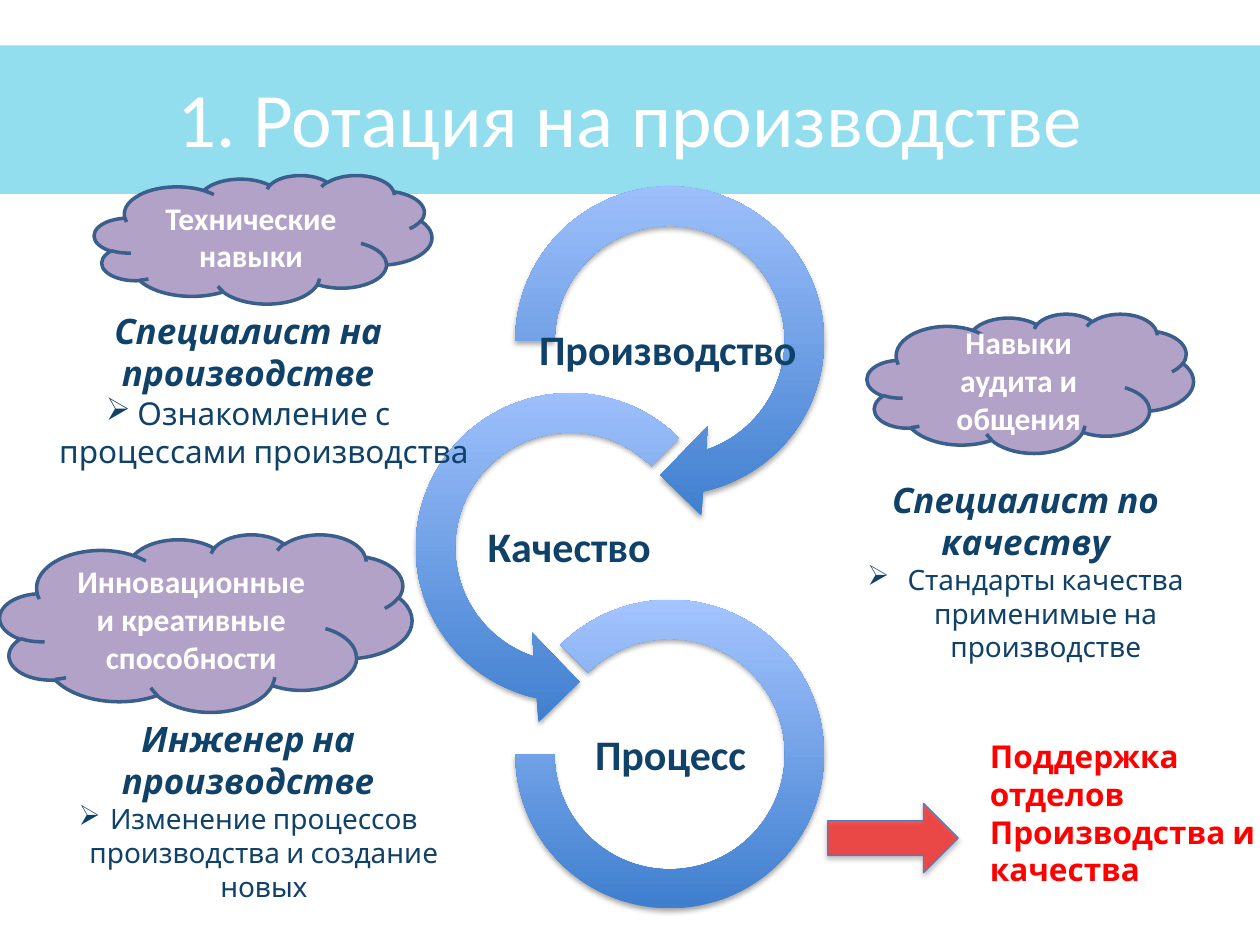
from lxml import etree
from pptx import Presentation
from pptx.dml.color import RGBColor
from pptx.enum.shapes import MSO_SHAPE
from pptx.enum.text import MSO_ANCHOR, MSO_AUTO_SIZE, PP_ALIGN
from pptx.oxml.ns import qn
from pptx.util import Inches, Pt

LEFT, MID = PP_ALIGN.LEFT, PP_ALIGN.CENTER
TOP, CENTER = MSO_ANCHOR.TOP, MSO_ANCHOR.MIDDLE
GROW = MSO_AUTO_SIZE.SHAPE_TO_FIT_TEXT
RECT, CLOUD, ARROW = MSO_SHAPE.RECTANGLE, MSO_SHAPE.CLOUD, MSO_SHAPE.RIGHT_ARROW
RIGHT_TURN, LEFT_TURN = MSO_SHAPE.CIRCULAR_ARROW, MSO_SHAPE.LEFT_CIRCULAR_ARROW
ARC = MSO_SHAPE.BLOCK_ARC

HEX = {"band": "12B7DC", "white": "FFFFFF", "navy": "104168", "deep": "3F7FCE",
       "pale": "A4C4FF", "lilac": "B3A2C7", "edge": "3A5F8C", "red": "FF0000",
       "rim": "4B7EBC", "black": "000000"}
UNIT = Inches(0.1)  # the slide is a grid of 100 columns by 75 rows


def color(name):
    return RGBColor.from_string(HEX[name])


def part(box, share):
    """Turn shares of a box into a box on the grid."""
    x, y, w, h = box
    a, b, c, d = share
    return x + a * w, y + b * h, c * w, d * h


def place(box):
    return [round(n * UNIT) for n in box]


def write(shape, *lines, font="Calibri", size=18, tint="white", bold=False,
          italic=False, align=MID, anchor=CENTER, inset=None, space=None):
    """Add lines to a shape; a line is text, or text with its own format."""
    frame = shape.text_frame
    frame.word_wrap, frame.vertical_anchor = True, anchor
    if inset is not None:
        frame.margin_left = frame.margin_right = Inches(inset)
        frame.margin_top = frame.margin_bottom = Inches(inset)
    for i, line in enumerate(lines):
        text, own = (line, {}) if isinstance(line, str) else line
        para = frame.add_paragraph() if i else frame.paragraphs[0]
        if "bullet" in own:
            hang = Inches(own["bullet"])
            props = para._p.get_or_add_pPr()
            props.set("marL", str(hang))
            props.set("indent", str(-hang))
            etree.SubElement(props, qn("a:buChar")).set("char", "➢")
        para.alignment = align
        if space:
            para.line_spacing = space
        run = para.add_run()
        run.text = text
        face = run.font
        face.name, face.size = font, Pt(own.get("size", size))
        face.bold, face.italic = own.get("bold", bold), own.get("italic", italic)
        face.color.rgb = color(tint)


def note(slide, box, *lines, grow=False, **style):
    shape = slide.shapes.add_textbox(*place(box))
    write(shape, *lines, **style)
    if grow:
        shape.text_frame.auto_size = GROW


def draw(slide, kind, box, fill=None, alpha=None, line=None, width=1):
    shape = slide.shapes.add_shape(kind, *place(box))
    shape.shadow.inherit = False
    if fill:
        shape.fill.solid()
        shape.fill.fore_color.rgb = color(fill)
    if alpha:
        tone = shape.element.spPr.find(".//" + qn("a:srgbClr"))
        etree.SubElement(tone, qn("a:alpha")).set("val", str(alpha * 1000))
    if line:
        shape.line.color.rgb, shape.line.width = color(line), Pt(width)
    else:
        shape.line.fill.background()
    return shape


def shade(shape):
    """Give a shape a soft shadow below it."""
    list_ = shape.element.spPr.find(qn("a:effectLst"))
    drop = etree.SubElement(list_, qn("a:outerShdw"), blurRad=str(Pt(3.1)),
                            dist=str(Pt(1.8)), dir="5400000", rotWithShape="0")
    tone = etree.SubElement(drop, qn("a:srgbClr"), val=HEX["black"])
    etree.SubElement(tone, qn("a:alpha"), val="35000")


def header(slide, box, text):
    title = slide.shapes.title
    title.left, title.top, title.width, title.height = place(part(box, (0.06, -0.05, 0.88, 1.06)))
    write(title, text, size=44)
    band = draw(slide, RECT, box, "band", alpha=46)
    title.element.addprevious(band.element)


def ring(slide, box, kind, turns, label, share):
    shape = draw(slide, kind, box)
    for i, turn in enumerate(turns):
        shape.adjustments[i] = turn
    shape.fill.gradient()
    shape.fill.gradient_angle = 90
    for stop, name in zip(shape.fill.gradient_stops, ("deep", "pale")):
        stop.color.rgb = color(name)
    shade(shape)
    note(slide, part(box, share), label, size=24, tint="navy", bold=True,
         inset=0.02, space=0.9)


def role(slide, box, skill, share, split, name, task, size, hang):
    """A job with its task, below a cloud that holds the skill."""
    note(slide, part(box, (0, split, 1, 1 - split)), name,
         (task, {"size": size, "bold": False, "italic": False, "bullet": hang}),
         font="Cabin", size=20, tint="navy", bold=True, italic=True,
         anchor=TOP, grow=True)
    cloud = draw(slide, CLOUD, part(box, share), "lilac", line="edge", width=2)
    write(cloud, skill, bold=True)


def support(slide, box, text):
    arrow = draw(slide, ARROW, part(box, (0, 0.44, 0.27, 0.42)), "red",
                 alpha=64, line="rim", width=0.75)
    shade(arrow)
    note(slide, part(box, (0.31, 0, 0.69, 1)), text, font="Cabin", tint="red",
         bold=True, align=LEFT, anchor=TOP, grow=True)


RINGS = [
    ((38.9, 12.8, 28.5, 28.5), RIGHT_TURN, (0.11, 11.42, 45, 108, 0.125),
     "Производство", (0.09, 0.39, 0.81, 0.28)),
    ((31, 29.2, 28.5, 28.5), LEFT_TURN, (0.11, 11.42, 63, 189, 0.125),
     "Качество", (0.22, 0.365, 0.555, 0.28)),
    ((40.9, 47.6, 24.5, 24.5), ARC, (135, 108, 0.127),
     "Процесс", (0.18, 0.35, 0.645, 0.32)),
]
ROLES = [
    ((0, 13.9, 39.4, 24), "Технические навыки", (0.19, 0, 0.68, 0.425), 0.425,
     "Специалист на производстве", "Ознакомление с процессами производства", 18, 0.25),
    ((62.9, 24.9, 37, 25.7), "Навыки аудита и общения", (0.16, 0, 0.7, 0.43), 0.49,
     "Специалист по качеству", "Стандарты качества применимые на производстве", 16, 0.32),
    ((0, 42.4, 39.4, 27.1), "Инновационные и креативные способности",
     (0, 0, 0.83, 0.52), 0.52, "Инженер на производстве",
     "Изменение процессов производства и создание новых", 16, 0.25),
]


def main():
    deck = Presentation()
    deck.slide_width, deck.slide_height = 100 * UNIT, 75 * UNIT
    slide = deck.slides.add_slide(deck.slide_layouts[5])
    header(slide, (-1.2, 3.6, 102.4, 11.8), "1. Ротация на производстве")
    for item in RINGS:
        ring(slide, *item)
    for item in ROLES:
        role(slide, *item)
    support(slide, (65.7, 58, 38.3, 13.1), "Поддержка отделов Производства и качества")
    deck.save("out.pptx")


if __name__ == "__main__":
    main()
